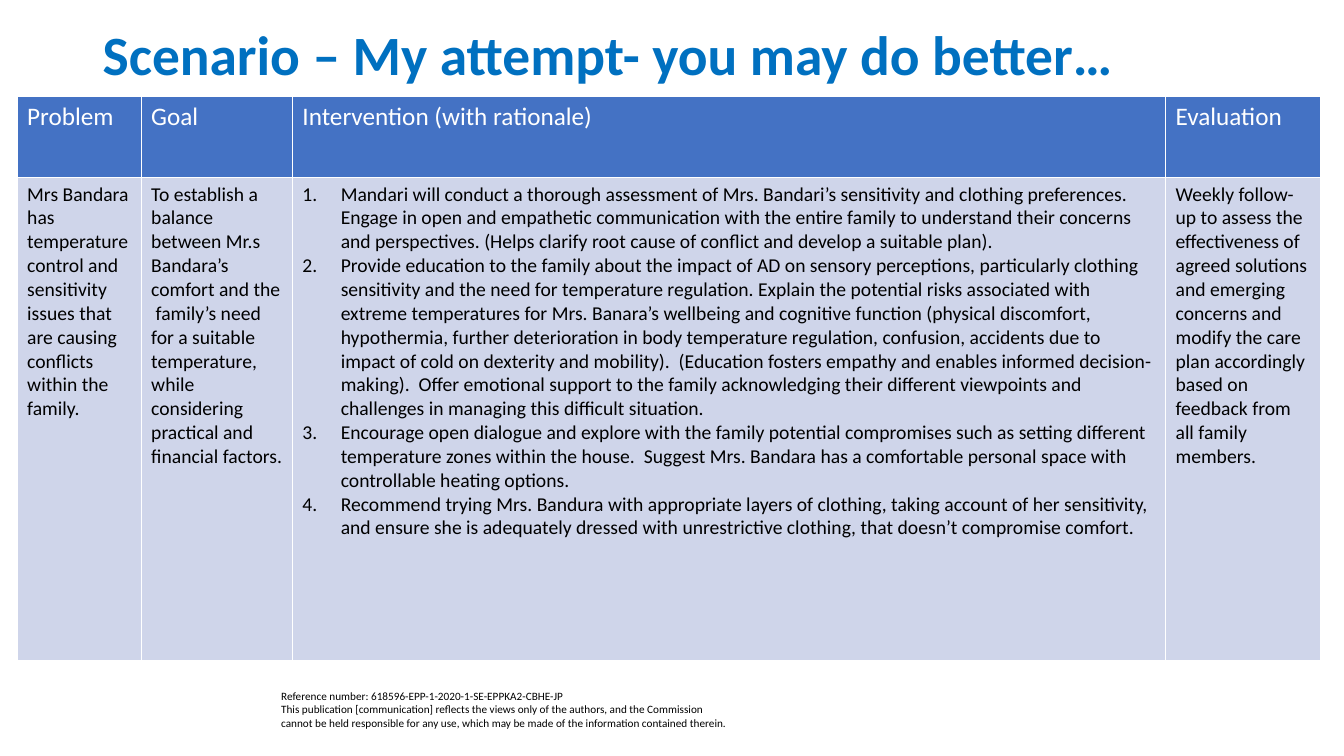
from dataclasses import dataclass

from lxml import etree
from pptx import Presentation
from pptx import util as u
from pptx.dml import color
from pptx.enum import text
from pptx.oxml import ns

FONT = "Calibri"
BLUE, HEADER, BODY, WHITE, BLACK = "0070C0", "4472C4", "CFD5EA", "FFFFFF", "000000"
ROW_HEIGHTS = (0.8, 4.79)
HEADER_FORMAT = {"size": u.Pt(18), "bold": False}
BODY_FORMAT = {"size": u.Pt(14), "bold": False}


@dataclass
class Column:
    heading: str
    width: float
    paragraphs: list[str]
    numbered: bool = False


@dataclass
class Label:
    content: str
    left: float
    top: float
    width: float
    height: float
    ink: str
    fmt: dict
    anchor: text.MSO_ANCHOR = text.MSO_ANCHOR.TOP
    spacing: float = 1.0


COLUMNS = [
    Column("Problem", 1.23, [
        "Mrs Bandara has temperature control and sensitivity issues that are "
        "causing conflicts within the family."]),
    Column("Goal", 1.5, [
        "To establish a balance between Mr.s Bandara’s comfort and the  family’s need "
        "for a suitable temperature, while considering practical and financial factors."]),
    Column("Intervention (with rationale)", 8.66, [
        "Mandari will conduct a thorough assessment of Mrs. Bandari’s sensitivity and "
        "clothing preferences.  Engage in open and empathetic communication with the "
        "entire family to understand their concerns and perspectives. (Helps clarify "
        "root cause of conflict and develop a suitable plan).",
        "Provide education to the family about the impact of AD on sensory perceptions, "
        "particularly clothing sensitivity and the need for temperature regulation. "
        "Explain the potential risks associated with extreme temperatures for Mrs. "
        "Banara’s wellbeing and cognitive function (physical discomfort, hypothermia, "
        "further deterioration in body temperature regulation, confusion, accidents due "
        "to impact of cold on dexterity and mobility).  (Education fosters empathy and "
        "enables informed decision-making).  Offer emotional support to the family "
        "acknowledging their different viewpoints and challenges in managing this "
        "difficult situation.",
        "Encourage open dialogue and explore with the family potential compromises such "
        "as setting different temperature zones within the house.  Suggest Mrs. Bandara "
        "has a comfortable personal space with controllable heating options.",
        "Recommend trying Mrs. Bandura with appropriate layers of clothing, taking "
        "account of her sensitivity, and ensure she is adequately dressed with "
        "unrestrictive clothing, that doesn’t compromise comfort."], numbered=True),
    Column("Evaluation", 1.54, [
        "Weekly follow-up to assess the effectiveness of agreed solutions and emerging "
        "concerns and modify the care plan accordingly based on feedback from all "
        "family members."]),
]

LABELS = [
    Label("Reference number: 618596-EPP-1-2020-1-SE-EPPKA2-CBHE-JP\v"
          "This publication [communication] reflects the views only of the authors, and "
          "the Commission cannot be held responsible for any use, which may be made of "
          "the information contained therein.",
          2.69, 6.79, 4.64, 0.5, BLACK, {"size": u.Pt(8)}),
    Label("Scenario – My attempt- you may do better…", 0.92, 0.4, 11.5, 0.35, BLUE,
          {"size": u.Pt(39.6), "bold": True}, text.MSO_ANCHOR.MIDDLE, 0.9),
]


def rgb(value: str) -> color.RGBColor:
    return color.RGBColor.from_string(value)


def style_font(font, ink: str, fmt: dict) -> None:
    for name, value in {"name": FONT, **fmt}.items():
        setattr(font, name, value)
    font.color.rgb = rgb(ink)


def add_label(slide, label: Label) -> None:
    box = (label.left, label.top, label.width, label.height)
    sp = slide.shapes.add_textbox(*map(u.Inches, box))
    tf = sp.text_frame
    tf.word_wrap = True
    tf.vertical_anchor = label.anchor
    p = tf.paragraphs[0]
    p.text = label.content
    p.line_spacing = label.spacing
    for r in p.runs:
        style_font(r.font, label.ink, label.fmt)


def number_paragraph(p) -> None:
    pPr = p._p.get_or_add_pPr()
    pPr.set("marL", str(u.Inches(0.38)))
    pPr.set("indent", str(u.Inches(-0.38)))
    etree.SubElement(pPr, ns.qn("a:buFont"), typeface="+mj-lt")
    etree.SubElement(pPr, ns.qn("a:buAutoNum"), type="arabicPeriod")


def border_cell(cell) -> None:
    tcPr = cell._tc.get_or_add_tcPr()
    for i, side in enumerate(("lnL", "lnR", "lnT", "lnB")):
        ln = etree.Element(ns.qn(f"a:{side}"), w=str(u.Pt(1)))
        fill = etree.SubElement(ln, ns.qn("a:solidFill"))
        etree.SubElement(fill, ns.qn("a:srgbClr"), val=WHITE)
        tcPr.insert(i, ln)


def fill_cell(cell, paragraphs: list[str], back: str, ink: str, fmt: dict,
              numbered: bool = False) -> None:
    cell.fill.solid()
    cell.fill.fore_color.rgb = rgb(back)
    border_cell(cell)
    tf = cell.text_frame
    for i, content in enumerate(paragraphs):
        p = tf.add_paragraph() if i else tf.paragraphs[0]
        if numbered:
            number_paragraph(p)
        r = p.add_run()
        r.text = content
        style_font(r.font, ink, fmt)


def add_care_plan(slide, columns: list[Column]) -> None:
    width = sum(c.width for c in columns)
    box = (0.17, 0.96, width, sum(ROW_HEIGHTS))
    table = slide.shapes.add_table(len(ROW_HEIGHTS), len(columns), *map(u.Inches, box)).table
    table.horz_banding = False
    for row, height in zip(table.rows, ROW_HEIGHTS):
        row.height = u.Inches(height)
    for i, column in enumerate(columns):
        table.columns[i].width = u.Inches(column.width)
        fill_cell(table.cell(0, i), [column.heading], HEADER, WHITE, HEADER_FORMAT)
        fill_cell(table.cell(1, i), column.paragraphs, BODY, BLACK, BODY_FORMAT,
                  column.numbered)


def main() -> None:
    prs = Presentation()
    prs.slide_width, prs.slide_height = u.Inches(13.33), u.Inches(7.5)
    slide = prs.slides.add_slide(prs.slide_layouts[6])
    for label in LABELS:
        add_label(slide, label)
    add_care_plan(slide, COLUMNS)
    prs.save("out.pptx")


if __name__ == "__main__":
    main()
